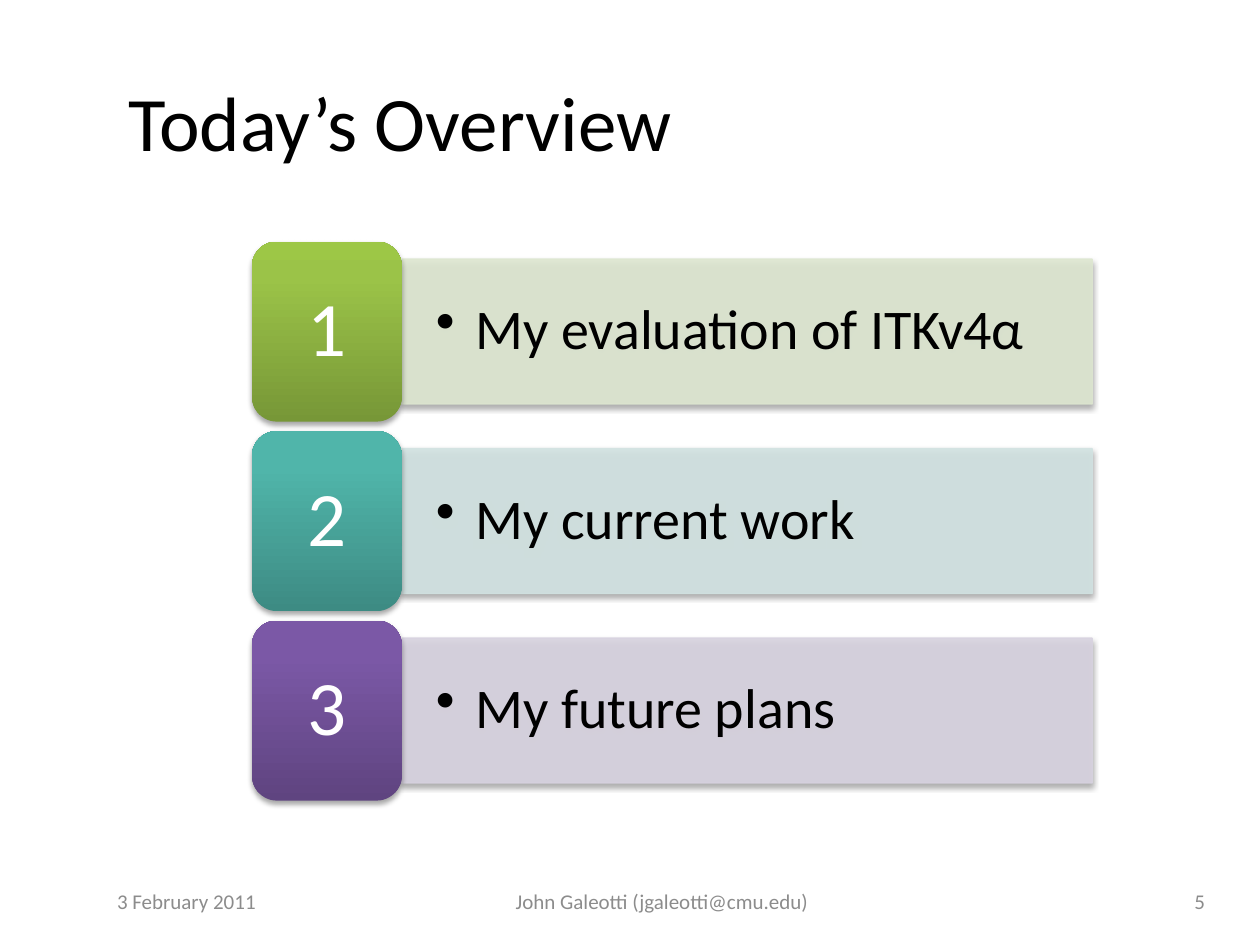
import copy

import pptx
import pptx.dml.color
import pptx.enum.shapes
import pptx.enum.text
import pptx.oxml.ns
import pptx.util
from lxml import etree
from pptx.util import Cm

ALIGN = pptx.enum.text.PP_ALIGN
SHAPE = pptx.enum.shapes.MSO_SHAPE
FONT = "Calibri"
COLORS = {"text": "000000", "number": "FFFFFF", "footer": "8C8C8C", "shadow": "000000"}

# Topic, bar colour, tile gradient from bottom to top
TOPICS = [
    ("My evaluation of ITKv4α", "DEE7D1", ("779737", "9BC348", "9DC746")),
    ("My current work", "D2E3E2", ("3D8B83", "50B5AA", "4EB8AC")),
    ("My future plans", "D8D3E0", ("5F4480", "7B58A6", "7C57A8")),
]
GRADIENT_POSITIONS = (0, 0.8, 1)

TILE_LEFT, TILE_WIDTH, TILE_HEIGHT = 5.08, 3.02, 3.63
BAR_WIDTH, BAR_HEIGHT = 13.92, 2.92
FIRST_TOP, ROW_PITCH = 4.87, 3.82
FOOTER_TOP, FOOTER_HEIGHT = 17.65, 1.02


def rgb(value):
    return pptx.dml.color.RGBColor.from_string(value)


def add_child(parent, tag, **attributes):
    child = etree.SubElement(parent, pptx.oxml.ns.qn(tag))
    for name, value in attributes.items():
        child.set(name, str(value))
    return child


def write_text(shape, text, size, color, align=ALIGN.LEFT):
    frame = shape.text_frame
    frame.word_wrap = True
    frame.vertical_anchor = pptx.enum.text.MSO_ANCHOR.MIDDLE
    paragraph = frame.paragraphs[0]
    paragraph.text = text
    paragraph.alignment = align
    paragraph.font.name = FONT
    paragraph.font.size = pptx.util.Pt(size)
    paragraph.font.color.rgb = rgb(color)
    return paragraph


def add_text(slide, box, text, size, color, align=ALIGN.LEFT):
    shape = slide.shapes.add_textbox(*map(Cm, box))
    write_text(shape, text, size, color, align)


def add_shadow(shape):
    """Give the shape a soft shadow just below it."""
    shape.shadow.inherit = False
    effects = shape._element.spPr.find(pptx.oxml.ns.qn("a:effectLst"))
    shadow = add_child(effects, "a:outerShdw", blurRad=pptx.util.Pt(3.1),
                       dist=pptx.util.Pt(1.8), dir=5400000, rotWithShape=0)
    color = add_child(shadow, "a:srgbClr", val=COLORS["shadow"])
    add_child(color, "a:alpha", val=35000)


def fill_gradient(shape, colors):
    shape.fill.gradient()
    shape.fill.gradient_angle = 90
    stop_list = shape._element.spPr.find(".//" + pptx.oxml.ns.qn("a:gsLst"))
    stop_list.append(copy.deepcopy(stop_list[-1]))
    for stop, position, color in zip(shape.fill.gradient_stops, GRADIENT_POSITIONS, colors):
        stop.position = position
        stop.color.rgb = rgb(color)


def add_bullet(paragraph):
    properties = paragraph._p.get_or_add_pPr()
    properties.set("marL", str(Cm(0.79)))
    properties.set("indent", str(-Cm(0.79)))
    add_child(properties, "a:buChar", char="•")


def add_bar(slide, top, text, color):
    shape = slide.shapes.add_shape(SHAPE.RECTANGLE, Cm(TILE_LEFT + TILE_WIDTH), Cm(top),
                                   Cm(BAR_WIDTH), Cm(BAR_HEIGHT))
    shape.fill.solid()
    shape.fill.fore_color.rgb = rgb(color)
    shape.line.color.rgb = rgb(color)
    shape.line.width = pptx.util.Pt(0.75)
    for color_element in shape._element.spPr.iter(pptx.oxml.ns.qn("a:srgbClr")):
        add_child(color_element, "a:alpha", val=90000)
    add_shadow(shape)
    frame = shape.text_frame
    frame.margin_left = frame.margin_right = Cm(0.69)
    paragraph = write_text(shape, "", 32, COLORS["text"])
    paragraph.line_spacing = 0.9
    paragraph.text = text
    properties = paragraph._p.get_or_add_pPr()
    run_defaults = properties.find(pptx.oxml.ns.qn("a:defRPr"))
    add_bullet(paragraph)
    properties.append(run_defaults)


def add_tile(slide, top, number, colors):
    shape = slide.shapes.add_shape(SHAPE.ROUNDED_RECTANGLE, Cm(TILE_LEFT), Cm(top),
                                   Cm(TILE_WIDTH), Cm(TILE_HEIGHT))
    fill_gradient(shape, colors)
    shape.line.fill.background()
    add_shadow(shape)
    paragraph = write_text(shape, str(number), 44, COLORS["number"], ALIGN.CENTER)
    paragraph.line_spacing = 0.9


def add_footer(slide, left, width, text, align):
    add_text(slide, (left, FOOTER_TOP, width, FOOTER_HEIGHT), text, 12, COLORS["footer"], align)


def main():
    presentation = pptx.Presentation()
    presentation.slide_width = Cm(25.4)
    presentation.slide_height = Cm(19.05)
    slide = presentation.slides.add_slide(presentation.slide_layouts[6])

    add_text(slide, (2.34, 0.84, 22.43, 3.18), "Today’s Overview", 44, COLORS["text"])
    for index, (topic, bar_color, tile_colors) in enumerate(TOPICS):
        top = FIRST_TOP + index * ROW_PITCH
        add_bar(slide, top + (TILE_HEIGHT - BAR_HEIGHT) / 2, topic, bar_color)
        add_tile(slide, top, index + 1, tile_colors)

    add_footer(slide, 2.11, 5.92, "3 February 2011", ALIGN.LEFT)
    add_footer(slide, 9.32, 8.05, "John Galeotti (jgaleotti@cmu.edu)", ALIGN.CENTER)
    add_footer(slide, 18.62, 5.92, "5", ALIGN.RIGHT)
    presentation.save("out.pptx")


if __name__ == "__main__":
    main()
